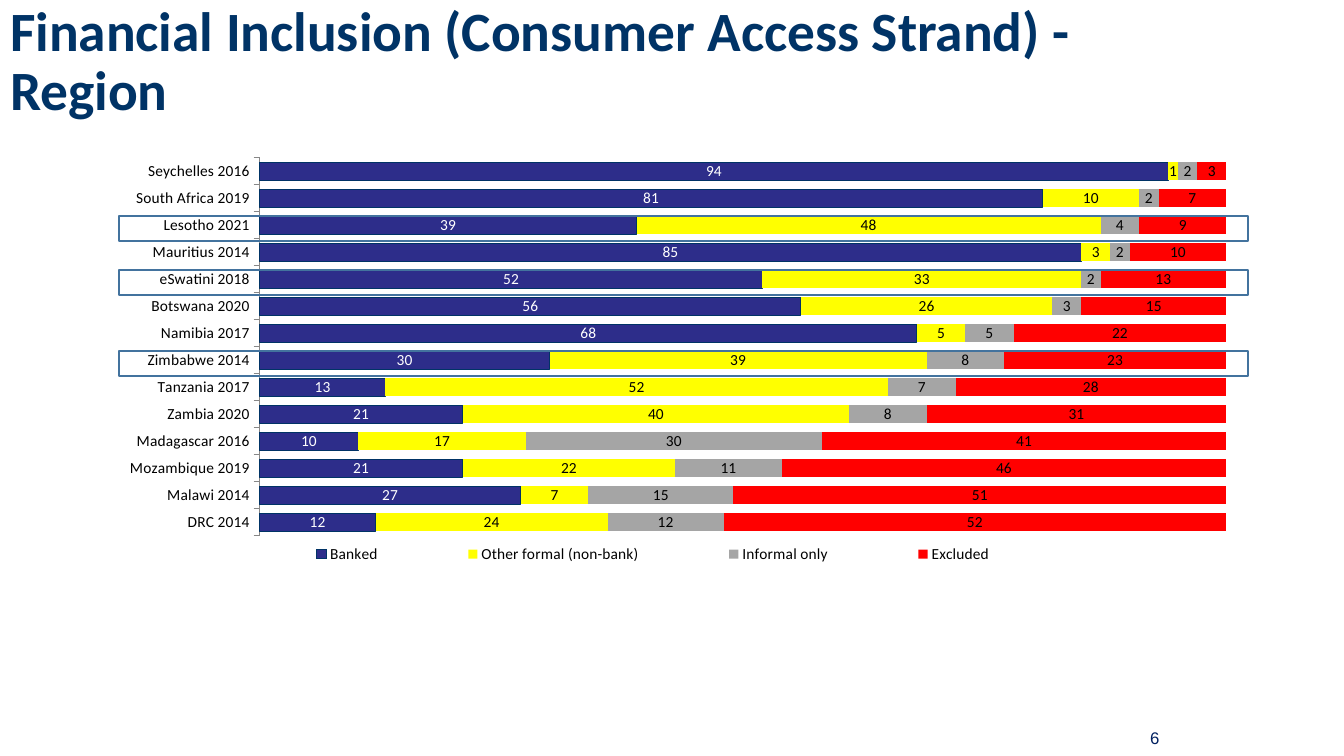
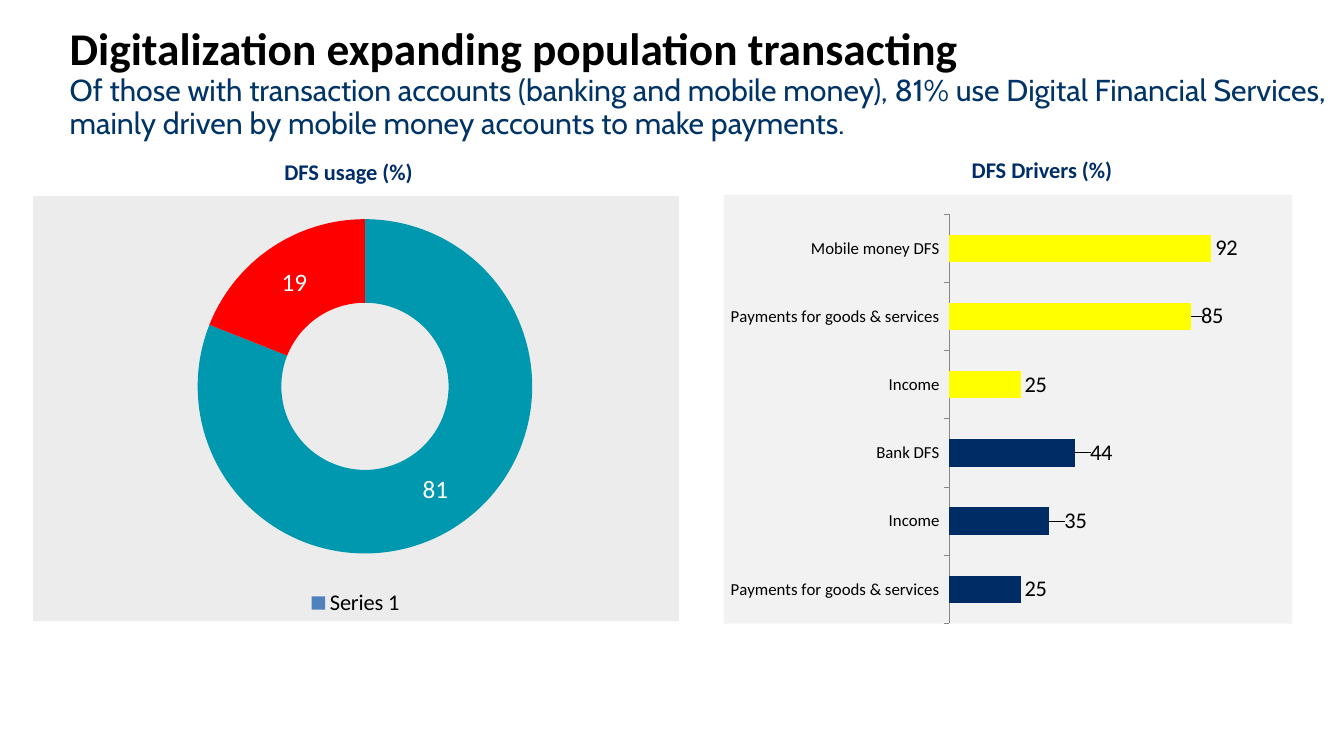
import pptx
import pptx.chart.data
import pptx.dml.color
import pptx.enum.chart
import pptx.enum.shapes
import pptx.enum.text
import pptx.oxml
import pptx.oxml.ns
import pptx.util

Pt = pptx.util.Pt
CHART = pptx.enum.chart
CHART_TYPE = CHART.XL_CHART_TYPE
ALIGN = pptx.enum.text.PP_ALIGN
ANCHOR = pptx.enum.text.MSO_ANCHOR

NAVY, BLACK, WHITE = "003366", "000000", "FFFFFF"
YELLOW, RED, DARK_BLUE = "FFFF00", "FF0000", "002C66"
HEADING_BLUE, AXIS_GRAY = "002D69", "878787"
BODY_FONT = "Calibri"

# Access strand: values per country run in the order of STRANDS, top bar first
ACCESS_TITLE = "Financial Inclusion (Consumer Access Strand) - Region"
STRANDS = [  # name, fill, label colour
    ("Banked", "2D2D8A", WHITE),
    ("Other formal (non-bank)", YELLOW, BLACK),
    ("Informal only", "A5A5A5", BLACK),
    ("Excluded", RED, BLACK),
]
COUNTRIES = [
    ("Seychelles 2016", (94, 1, 2, 3)),
    ("South Africa 2019", (81, 10, 2, 7)),
    ("Lesotho 2021", (39, 48, 4, 9)),
    ("Mauritius 2014", (85, 3, 2, 10)),
    ("eSwatini 2018", (52, 33, 2, 13)),
    ("Botswana 2020", (56, 26, 3, 15)),
    ("Namibia 2017", (68, 5, 5, 22)),
    ("Zimbabwe 2014", (30, 39, 8, 23)),
    ("Tanzania 2017", (13, 52, 7, 28)),
    ("Zambia 2020", (21, 40, 8, 31)),
    ("Madagascar 2016", (10, 17, 30, 41)),
    ("Mozambique 2019", (21, 22, 11, 46)),
    ("Malawi 2014", (27, 7, 15, 51)),
    ("DRC 2014", (12, 24, 12, 52)),
]
HIGHLIGHTED = ("Lesotho 2021", "eSwatini 2018", "Zimbabwe 2014")
PAGE_NUMBER = "6"

DIGITAL_TITLE = "Digitalization expanding population transacting"
DIGITAL_SUBTITLE = (
    "Of those with transaction accounts (banking and mobile money), 81% use Digital "
    "Financial Services, mainly driven by mobile money accounts to make payments."
)
USAGE = [("Yes", 81, "0098AF"), ("No", 19, RED)]
DRIVERS = [  # name, value, fill, label shift as a share of the chart width
    ("Mobile money DFS", 92, YELLOW, 0),
    ("Payments for goods & services", 85, YELLOW, 0.01),
    ("Income", 25, YELLOW, 0),
    ("Bank DFS", 44, DARK_BLUE, 0.02),
    ("Income", 35, DARK_BLUE, 0.02),
    ("Payments for goods & services", 25, DARK_BLUE, 0),
]
CHART_HEADINGS = [("DFS usage (%)", 196, 109.5), ("DFS Drivers (%)", 687, 108)]


def rgb(color):
    return pptx.dml.color.RGBColor.from_string(color)


def box(*lengths):
    return [Pt(length) for length in lengths]


def paint(part, color):
    part.format.fill.solid()
    part.format.fill.fore_color.rgb = rgb(color)


def set_font(font, size, color=BLACK, name=BODY_FONT, bold=False):
    font.size, font.name, font.bold = Pt(size), name, bold
    font.color.rgb = rgb(color)


def add_text(paragraph, text, **style):
    run = paragraph.add_run()
    run.text = text
    set_font(run.font, **style)


def add_text_box(slide, place, text, align=ALIGN.LEFT, **style):
    frame = slide.shapes.add_textbox(*box(*place)).text_frame
    frame.word_wrap = True
    frame.paragraphs[0].alignment = align
    add_text(frame.paragraphs[0], text, **style)


def add_slide(deck, title_place, title_lines):
    """Add a slide whose title holds (text, style) lines."""
    slide = deck.slides.add_slide(deck.slide_layouts[5])
    title = slide.shapes.title
    title.left, title.top, title.width, title.height = box(*title_place)
    frame = title.text_frame
    frame.word_wrap = True
    frame.auto_size = pptx.enum.text.MSO_AUTO_SIZE.NONE
    frame.vertical_anchor = ANCHOR.MIDDLE
    paragraph = frame.paragraphs[0]
    paragraph.alignment, paragraph.line_spacing = ALIGN.LEFT, 0.9
    for index, (text, style) in enumerate(title_lines):
        if index:
            paragraph.add_line_break()
        add_text(paragraph, text, **style)
    return slide


def chart_xml(body):
    return pptx.oxml.parse_xml(body.replace(
        ">", f" {pptx.oxml.ns.nsdecls('c', 'a')}>", 1))


def manual_layout(x, y, width=None, height=None, inner=False):
    parts = ['<c:layoutTarget val="inner"/>'] if inner else []
    if width:
        parts += ['<c:xMode val="edge"/>', '<c:yMode val="edge"/>']
    parts += [f'<c:{tag} val="{value}"/>'
              for tag, value in zip("xywh", (x, y, width, height)) if value is not None]
    return chart_xml(f"<c:layout><c:manualLayout>{''.join(parts)}</c:manualLayout></c:layout>")


def color_xml(color):
    return f'<a:solidFill><a:srgbClr val="{color}"/></a:solidFill>' if color else "<a:noFill/>"


def add_chart(slide, kind, place, categories, series, plot_area,
              size, back=None, border=None):
    data = pptx.chart.data.CategoryChartData()
    data.categories = categories
    for name, values in series:
        data.add_series(name, values)
    chart = slide.shapes.add_chart(kind, *box(*place), data).chart
    chart.has_title = chart.has_legend = False
    set_font(chart.font, size)
    area = chart._chartSpace.chart
    area.addnext(chart_xml(
        f'<c:spPr>{color_xml(back)}<a:ln w="9525">{color_xml(border)}</a:ln></c:spPr>'))
    for old in area.plotArea.findall(pptx.oxml.ns.qn("c:layout")):
        area.plotArea.remove(old)
    area.plotArea.insert(0, manual_layout(*plot_area, inner=True))
    chart.plots[0].vary_by_categories = False
    return chart


def show_values(series, size, color, position=None):
    labels = series.data_labels
    labels.show_value = True
    set_font(labels.font, size, color)
    if position is not None:
        labels.position = position


def add_legend(chart, size):
    chart.has_legend = True
    chart.legend.position = CHART.XL_LEGEND_POSITION.BOTTOM
    chart.legend.include_in_layout = False
    set_font(chart.legend.font, size)


def style_bars(chart, gap, size):
    chart.plots[0].gap_width = gap
    chart.value_axis.visible = False
    chart.value_axis.has_major_gridlines = False
    chart.value_axis.minimum_scale = 0
    axis = chart.category_axis
    axis.major_tick_mark = CHART.XL_TICK_MARK.OUTSIDE
    axis.format.line.color.rgb = rgb(AXIS_GRAY)
    axis.format.line.width = Pt(0.75)
    set_font(axis.tick_labels.font, size)


def build_access_slide(deck):
    slide = add_slide(deck, (0, 28.8, 877, 32.4),
                      [(ACCESS_TITLE, dict(size=39.6, color=NAVY, bold=True))])
    left, top, width, height = 36, 110.2, 840, 296
    plot_area = (0.178, 0.008, 0.822, 0.913)
    rows = COUNTRIES[::-1]
    chart = add_chart(
        slide, CHART_TYPE.BAR_STACKED_100, (left, top, width, height),
        [name for name, _ in rows],
        [(strand[0], [values[i] for _, values in rows]) for i, strand in enumerate(STRANDS)],
        plot_area, 11)
    style_bars(chart, 50, 11)
    chart.plots[0].overlap = 100
    for series, (_, fill, label_color) in zip(chart.plots[0].series, STRANDS):
        paint(series, fill)
        show_values(series, 11, label_color)
    banked_line = chart.plots[0].series[0].format.line
    banked_line.color.rgb, banked_line.width = rgb(NAVY), Pt(0.75)
    add_legend(chart, 11)
    chart.legend._element.find(pptx.oxml.ns.qn("c:legendPos")).addnext(
        manual_layout(0.154, 0.93, 0.717, 0.07))

    row_height = height * plot_area[3] / len(COUNTRIES)
    first_row = top + height * plot_area[1]
    for index, (name, _) in enumerate(COUNTRIES):
        if name in HIGHLIGHTED:
            outline = slide.shapes.add_shape(
                pptx.enum.shapes.MSO_SHAPE.RECTANGLE,
                *box(85, first_row + index * row_height + 3, 806.5, 18))
            outline.shadow.inherit = False
            outline.fill.background()
            outline.line.color.rgb, outline.line.width = rgb("43739E"), Pt(1)
    add_text_box(slide, (667.5, 516.2, 167.8, 37.4), PAGE_NUMBER, ALIGN.RIGHT,
                 size=12, color="002060", name="Arial")


def build_digital_slide(deck):
    slide = add_slide(deck, (42.5, 35.3, 917.3, 49), [
        (DIGITAL_TITLE, dict(size=32.4, bold=True)),
        (DIGITAL_SUBTITLE, dict(size=21.6, color=NAVY, name="Cabin")),
    ])
    for heading, left, top in CHART_HEADINGS:
        add_text_box(slide, (left, top, 142, 27.4), heading,
                     size=16, color=HEADING_BLUE, bold=True)

    names, values, fills = zip(*USAGE)
    usage = add_chart(slide, CHART_TYPE.DOUGHNUT, (22.5, 139, 463, 305), names,
                      [("Series 1", values)], (0.256, 0.042, 0.517, 0.814),
                      16, "ECECEC", WHITE)
    ring = usage.plots[0].series[0]
    for index, fill in enumerate(fills):
        paint(ring.points[index], fill)
    show_values(ring, 18, WHITE)
    add_legend(usage, 16)

    names, values, fills, shifts = zip(*DRIVERS[::-1])
    drivers = add_chart(slide, CHART_TYPE.BAR_CLUSTERED, (517, 139, 406, 306.7), names,
                        [("Series 1", values)], (0.397, 0.046, 0.501, 0.954),
                        14, "F2F2F2")
    style_bars(drivers, 150, 12)
    drivers.value_axis.maximum_scale = 100
    bars = drivers.plots[0].series[0]
    outside = CHART.XL_LABEL_POSITION.OUTSIDE_END
    show_values(bars, 16, BLACK, outside)
    for index, (fill, shift) in enumerate(zip(fills, shifts)):
        paint(bars.points[index], fill)
        if shift:
            label = bars.points[index].data_label
            set_font(label.font, 16)
            label.position = outside
            number = bars._element.xpath(f".//c:dLbl/c:idx[@val='{index}']")[0]
            number.addnext(manual_layout(shift, 0))


def main():
    deck = pptx.Presentation()
    deck.slide_width, deck.slide_height = box(960, 540)
    build_access_slide(deck)
    build_digital_slide(deck)
    deck.save("out.pptx")


if __name__ == "__main__":
    main()
